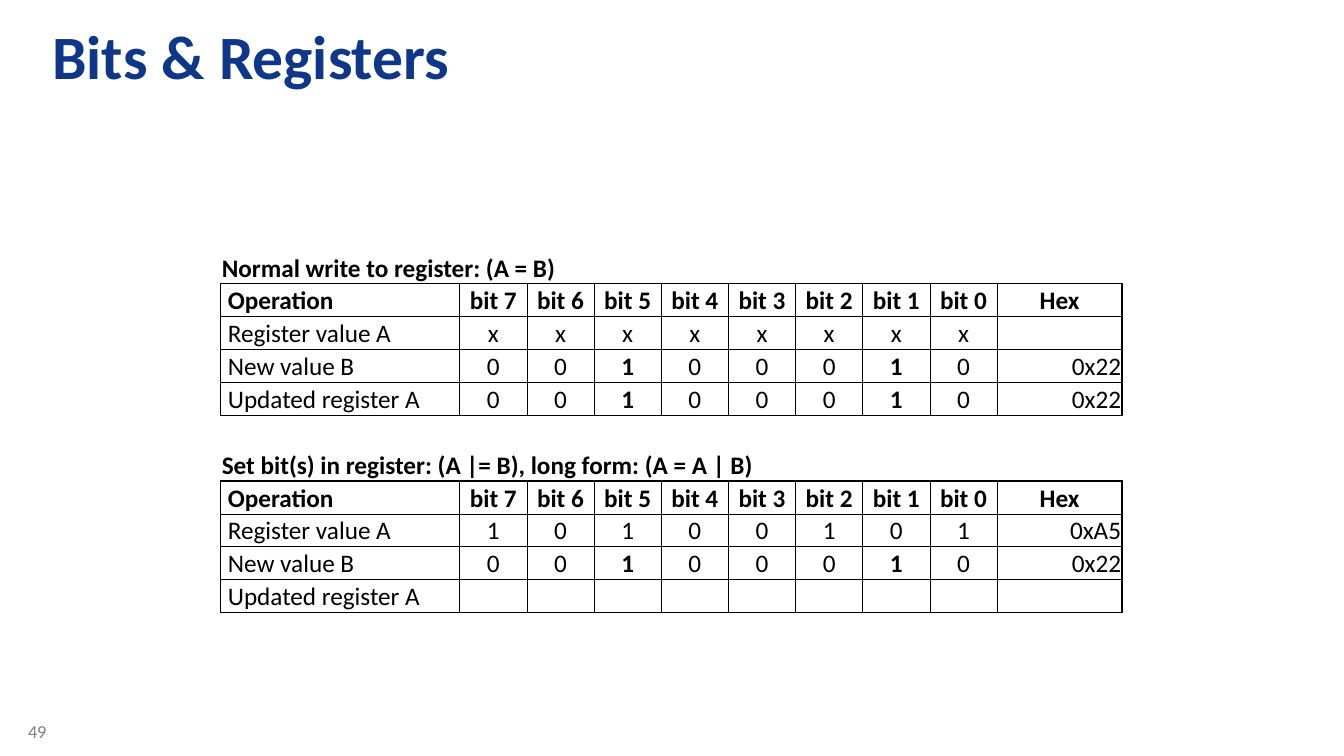
import pptx
import pptx.dml.color
import pptx.enum.text
import pptx.oxml
import pptx.oxml.ns
import pptx.util
from pptx.util import Inches

COLORS = {"title": "0E3689", "number": "808080", "ink": "000000", "result": "0A0B0F"}
ALIGN = pptx.enum.text.PP_ALIGN
ANCHOR = pptx.enum.text.MSO_ANCHOR
NO_STYLE = "{2D5ABB26-0587-4C30-8999-92F81FD0307C}"
THICK, THIN = 1, 0.5

BITS = range(7, -1, -1)
HEADER = ["Operation", *(f"bit {bit}" for bit in BITS), "Hex"]
NEW_VALUE = ["New value B", *"00100010", "0x22"]
BLOCKS = [
    ["Normal write to register: (A = B)"], HEADER,
    ["Register value A", *"xxxxxxxx", ""],
    NEW_VALUE,
    ["Updated register A", *"00100010", "0x22"],
    [],
    ["Set bit(s) in register: (A |= B), long form: (A = A | B)"], HEADER,
    ["Register value A", *"10100101", "0xA5"],
    NEW_VALUE,
    ["Updated register A", *[""] * 9],
]
BLOCK_ROWS = 6
LAST = len(HEADER) - 1


def write(para, text, size, color, bold=False):
    span = para.add_run()
    span.text = text
    formats = {"name": "Calibri", "size": pptx.util.Pt(size), "bold": bold}
    for name, value in formats.items():
        setattr(span.font, name, value)
    span.font.color.rgb = pptx.dml.color.RGBColor.from_string(COLORS[color])


def add_text(page, box, text, margins, **style):
    shape = page.shapes.add_textbox(*map(Inches, box))
    frame = shape.text_frame
    frame.word_wrap = True
    for side, value in zip(("left", "top", "right", "bottom"), margins):
        setattr(frame, f"margin_{side}", Inches(value))
    write(frame.paragraphs[0], text, **style)


def edge_widths(kind, column):
    """Border widths of a cell, from its row's place in the block."""
    if kind == 0:
        return {"L": 0, "R": 0, "T": 0, "B": THICK}
    if kind == 5:
        return {"L": 0, "R": 0, "T": THICK, "B": 0}
    return {
        "L": THICK if column == 0 else THIN,
        "R": THICK if column == LAST else THIN,
        "T": THICK if kind == 1 else THIN,
        "B": THICK if kind == 4 else THIN,
    }


def draw_borders(cell, widths):
    properties = cell._tc.get_or_add_tcPr()
    namespace = pptx.oxml.ns.nsdecls("a")
    for index, (side, width) in enumerate(widths.items()):
        paint = (f'<a:solidFill><a:srgbClr val="{COLORS["ink"]}"/></a:solidFill>'
                 if width else "<a:noFill/>")
        line = pptx.oxml.parse_xml(
            f'<a:ln{side} {namespace} w="{pptx.util.Pt(width)}">{paint}</a:ln{side}>')
        properties.insert(index, line)


def fill_cell(cell, kind, column, text):
    label = column == 0 and kind != 0
    formats = {
        "margin_left": Inches(0.07 if label else 0.01),
        "margin_right": Inches(0.01),
        "margin_top": Inches(0.01),
        "margin_bottom": 0,
        "vertical_anchor": ANCHOR.BOTTOM,
    }
    for name, value in formats.items():
        setattr(cell, name, value)
    cell.fill.background()
    draw_borders(cell, edge_widths(kind, column))
    if not text:
        return
    para = cell.text_frame.paragraphs[0]
    if column == 0:
        para.alignment = ALIGN.LEFT
    elif column == LAST and kind != 1:
        para.alignment = ALIGN.RIGHT
    else:
        para.alignment = ALIGN.CENTER
    set_bit = kind in (3, 4) and text == "1"
    color = "result" if kind == 4 and set_bit else "ink"
    write(para, text, 18, color, kind < 2 or set_bit)


def add_register_table(page, box):
    left, top, width, height = box
    frame = page.shapes.add_table(len(BLOCKS), len(HEADER), *map(Inches, box))
    table = frame.table
    table.first_row = table.horz_banding = False
    table._tbl.tblPr.find(pptx.oxml.ns.qn("a:tableStyleId")).text = NO_STYLE

    label_width, hex_width = 2.37, 1.24
    bit_width = (width - label_width - hex_width) / len(BITS)
    widths = [label_width, *[bit_width] * len(BITS), hex_width]
    for column, column_width in zip(table.columns, widths):
        column.width = Inches(column_width)
    for row in table.rows:
        row.height = Inches(height / len(BLOCKS))

    for row, values in enumerate(BLOCKS):
        kind = row % BLOCK_ROWS
        for column in range(len(HEADER)):
            text = values[column] if column < len(values) else ""
            fill_cell(table.cell(row, column), kind, column, text)
        if kind == 0:
            table.cell(row, 0).merge(table.cell(row, LAST))


def main():
    deck = pptx.Presentation()
    deck.slide_width, deck.slide_height = Inches(13.33), Inches(7.5)
    page = deck.slides.add_slide(deck.slide_layouts[6])
    add_text(page, (0.18, 7.1, 0.59, 0.4), "49", (0.1, 0.05, 0.1, 0.05),
             size=13, color="number")
    add_text(page, (0.39, 0.11, 12.47, 1.03), "Bits & Registers",
             (0.13, 0.07, 0.13, 0.07), size=44, color="title", bold=True)
    add_register_table(page, (2.19, 2.49, 8.94, 3.59))
    deck.save("out.pptx")


if __name__ == "__main__":
    main()
